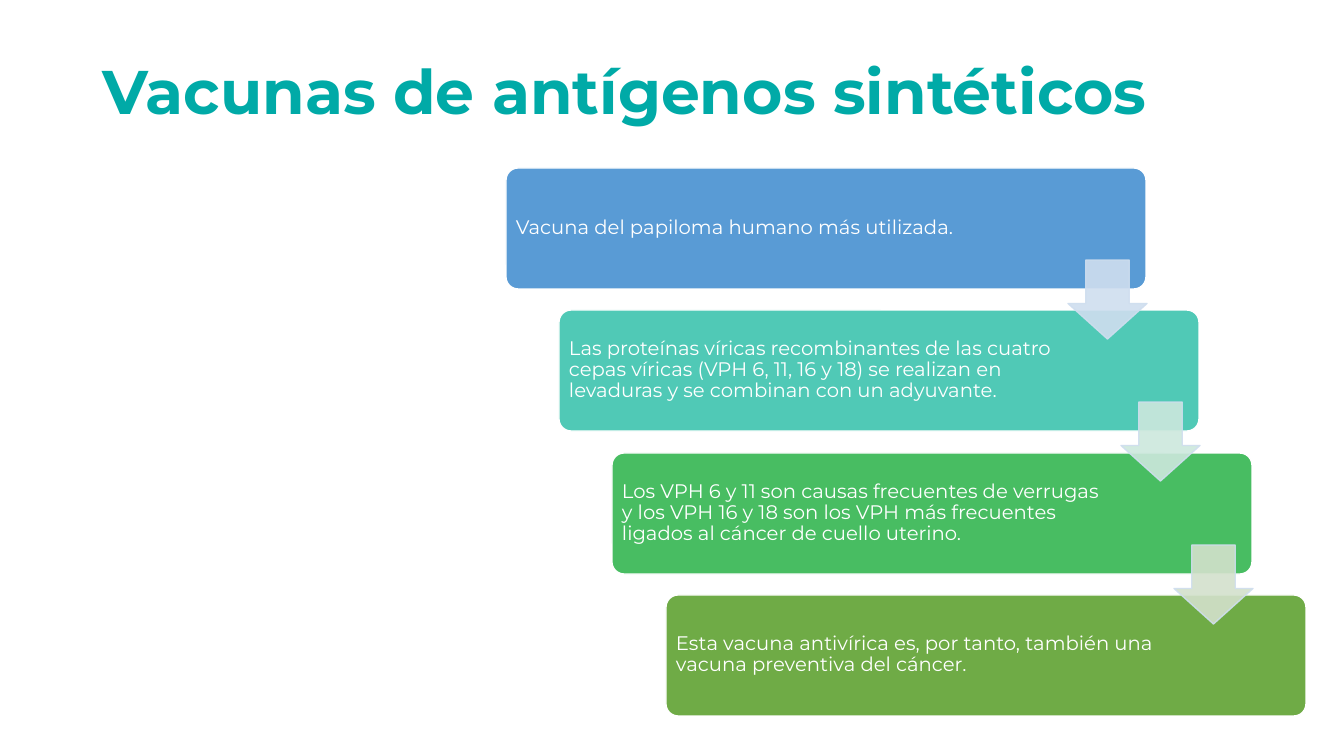
from lxml.etree import SubElement
from pptx import Presentation
from pptx.dml.color import RGBColor
from pptx.enum.shapes import MSO_SHAPE
from pptx.enum.text import MSO_ANCHOR, PP_ALIGN
from pptx.oxml.ns import qn
from pptx.util import Emu, Pt

EMU_PER_INCH = 914400
PX_PER_INCH = 100.8
FONT = "Montserrat"

COLORS = {
    "title": "00AAA7",
    "white": "FFFFFF",
    "arrow_edge": "CFDEEF",
}

# Text, box colour, colour of the arrow to the next step
STEPS = [
    ("Vacuna del papiloma humano más utilizada.", "599BD5", "CFDEEF"),
    ("Las proteínas víricas recombinantes de las cuatro cepas víricas "
     "(VPH 6, 11, 16 y 18) se realizan en levaduras y se combinan con un "
     "adyuvante.", "50C9B6", "CCE8DD"),
    ("Los VPH 6 y 11 son causas frecuentes de verrugas y los VPH 16 y 18 "
     "son los VPH más frecuentes ligados al cáncer de cuello uterino.",
     "48BD62", "D3E1CC"),
    ("Esta vacuna antivírica es, por tanto, también una vacuna preventiva "
     "del cáncer.", "6FAB46", None),
]


def px(length):
    return Emu(round(length * EMU_PER_INCH / PX_PER_INCH))


def step_origin(index):
    """Left and top of a step: each is 160/3 px right of and 285/2 px below the last."""
    return 506 + 160 * index // 3, 168 + 285 * index // 2


def set_alpha(shape, percent):
    """Make the fill and line of a shape partly transparent."""
    for color in shape._element.spPr.iter(qn("a:srgbClr")):
        SubElement(color, qn("a:alpha")).set("val", str(percent * 1000))


def add_preset(slide, preset, left, top, width, height, *, fill, line, adjustments):
    shape = slide.shapes.add_shape(preset, px(left), px(top), px(width), px(height))
    shape.shadow.inherit = False
    shape.fill.solid()
    shape.fill.fore_color.rgb = RGBColor.from_string(fill)
    shape.line.color.rgb = RGBColor.from_string(line)
    shape.line.width = Pt(1)
    for position, value in enumerate(adjustments):
        shape.adjustments[position] = value
    return shape


def add_text(slide, text, left, top, width, height, *, size, color,
             bold=False, inset_x=6, inset_y=6):
    box = slide.shapes.add_textbox(px(left), px(top), px(width), px(height))
    frame = box.text_frame
    frame.word_wrap = True
    frame.vertical_anchor = MSO_ANCHOR.MIDDLE
    frame.margin_left = frame.margin_right = px(inset_x)
    frame.margin_top = frame.margin_bottom = px(inset_y)
    paragraph = frame.paragraphs[0]
    paragraph.alignment = PP_ALIGN.LEFT
    paragraph.line_spacing = 0.9
    run = paragraph.add_run()
    run.text = text
    run.font.name = FONT
    run.font.size = Pt(size)
    run.font.bold = bold
    run.font.color.rgb = RGBColor.from_string(color)


def add_step(slide, index, text, fill):
    left, top = step_origin(index)
    add_preset(slide, MSO_SHAPE.ROUNDED_RECTANGLE, left, top, 640, 121,
               fill=fill, line=COLORS["white"], adjustments=[0.1])
    add_text(slide, text, left + 4, top + 3, 500, 114,
             size=14, color=COLORS["white"])


def add_step_arrow(slide, index, fill):
    left, top = step_origin(index)
    arrow = add_preset(slide, MSO_SHAPE.DOWN_ARROW, left + 562, top + 92, 79, 79,
                       fill=fill, line=COLORS["arrow_edge"],
                       adjustments=[0.55, 0.45])
    set_alpha(arrow, 90)


def main():
    presentation = Presentation()
    presentation.slide_width = px(1344)
    presentation.slide_height = px(756)
    slide = presentation.slides.add_slide(presentation.slide_layouts[6])

    add_text(slide, "Vacunas de antígenos sintéticos", 93, 22, 1159, 146,
             size=44, color=COLORS["title"], bold=True, inset_x=10, inset_y=5)
    for index, (text, fill, _) in enumerate(STEPS):
        add_step(slide, index, text, fill)
    for index, (_, _, arrow_fill) in enumerate(STEPS[:-1]):
        add_step_arrow(slide, index, arrow_fill)

    presentation.save("out.pptx")


if __name__ == "__main__":
    main()
